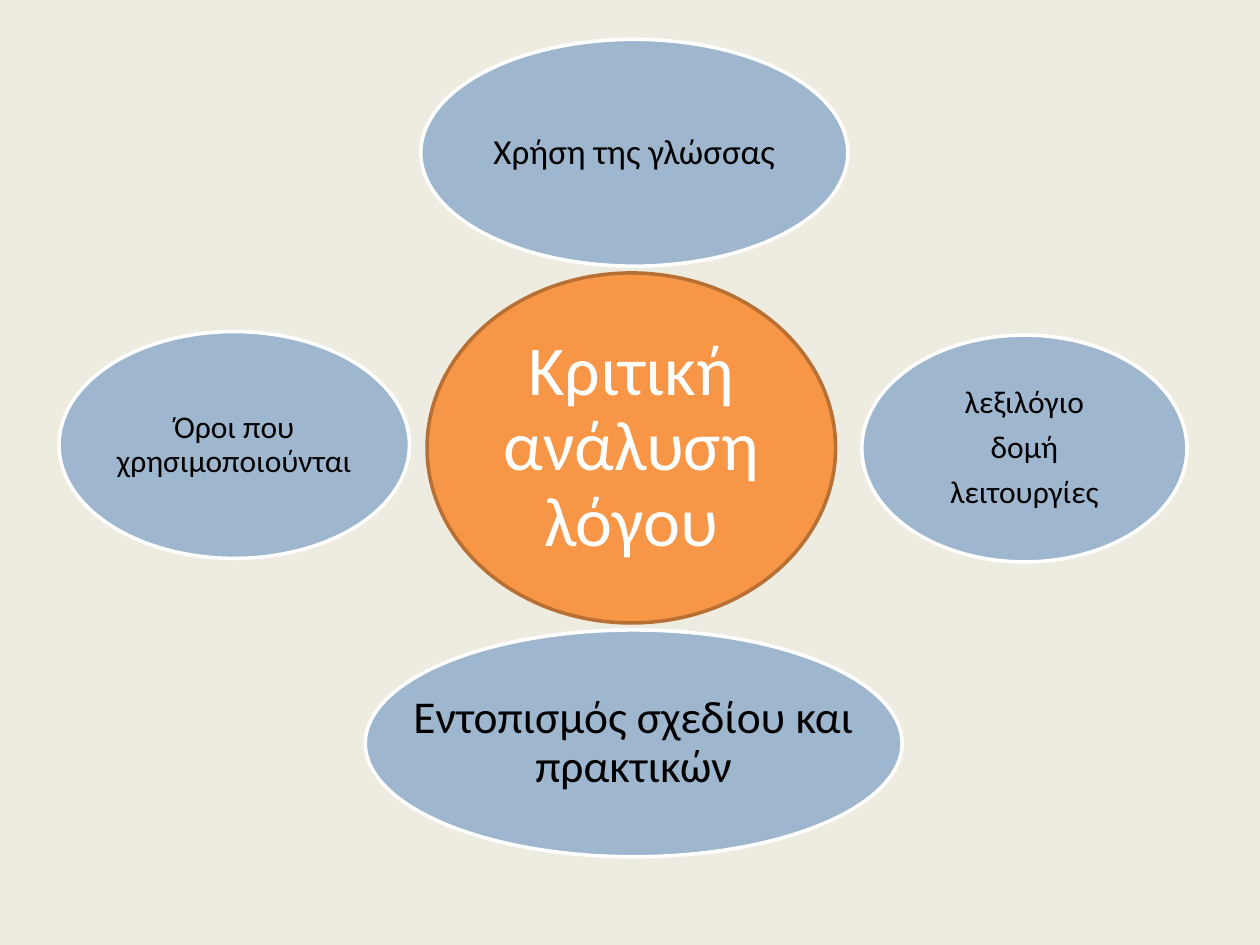
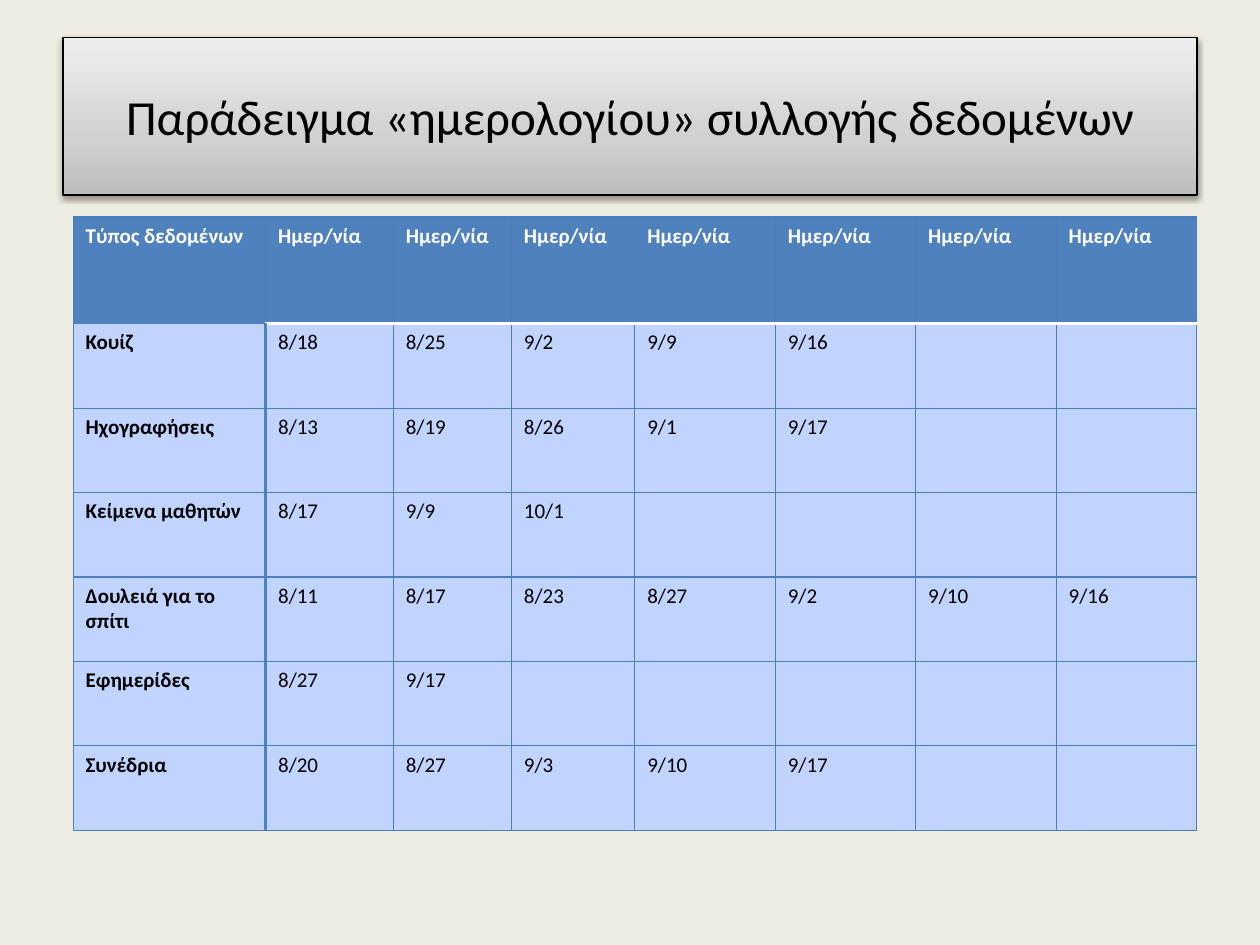
from lxml.etree import SubElement
from pptx import Presentation
from pptx.dml.color import RGBColor
from pptx.enum.shapes import MSO_SHAPE
from pptx.enum.text import MSO_ANCHOR, PP_ALIGN
from pptx.oxml import parse_xml
from pptx.oxml.ns import nsdecls, qn
from pptx.util import Pt

COLORS = {
    "background": "EEECE1",
    "orange": "F79646",
    "orange_edge": "B76F34",
    "blue": "4F81BD",
    "grid": "4B7EBC",
    "cell": "C0D4FF",
    "white": "FFFFFF",
    "black": "000000",
    "grey_dark": "BDBDBD",
    "grey_mid": "D1D1D1",
    "grey_light": "EEEEEE",
}
FONT = "Calibri"

SATELLITE_HEIGHT = 129.6
SATELLITES = [
    (["Χρήση της γλώσσας"], 240.5, 22.5, 244, 20),
    (["λεξιλόγιο", "δομή", "λειτουργίες"], 492.5, 191.5, 185.75, 18),
    (["Εντοπισμός σχεδίου και\vπρακτικών"], 208.75, 360, 306.75, 26),
    (["Όροι που χρησιμοποιούνται"], 33.75, 189.5, 200.25, 18),
]

COLUMN_WIDTHS = [110, 73, 67.5, 70.5] + [80.25] * 4
HEADER_HEIGHT, ROW_HEIGHT = 61, 48.25
DIARY = [
    ["Τύπος δεδομένων"] + ["Ημερ/νία"] * 7,
    ["Κουίζ", "8/18", "8/25", "9/2", "9/9", "9/16"],
    ["Ηχογραφήσεις", "8/13", "8/19", "8/26", "9/1", "9/17"],
    ["Κείμενα μαθητών", "8/17", "9/9", "10/1"],
    ["Δουλειά για το σπίτι", "8/11", "8/17", "8/23", "8/27", "9/2", "9/10", "9/16"],
    ["Εφημερίδες", "8/27", "9/17"],
    ["Συνέδρια", "8/20", "8/27", "9/3", "9/10", "9/17"],
]


def rgb(name):
    return RGBColor.from_string(COLORS[name])


def write(tf, lines, size, color="black", bold=False, align=PP_ALIGN.LEFT,
          spacing=None, after=None):
    for i, line in enumerate(lines):
        p = tf.paragraphs[0] if i == 0 else tf.add_paragraph()
        p.text = line
        p.alignment = align
        if spacing:
            p.line_spacing = spacing
        if after is not None:
            p.space_after = Pt(after)
        for r in p.runs:
            r.font.name = FONT
            r.font.size = Pt(size)
            r.font.bold = bold
            r.font.color.rgb = rgb(color)


def add_slide(prs, layout):
    s = prs.slides.add_slide(prs.slide_layouts.get_by_name(layout))
    s.background.fill.solid()
    s.background.fill.fore_color.rgb = rgb("background")
    return s


def add_ellipse(s, lines, x, y, w, h, fill, edge, size, color="black", alpha=None, margin=2):
    sp = s.shapes.add_shape(MSO_SHAPE.OVAL, Pt(x), Pt(y), Pt(w), Pt(h))
    sp.shadow.inherit = False
    sp.fill.solid()
    sp.fill.fore_color.rgb = rgb(fill)
    if alpha:
        clr = sp.fill._xPr.find(qn("a:solidFill"))[0]
        SubElement(clr, qn("a:alpha"), val=str(alpha * 1000))
    sp.line.color.rgb = rgb(edge)
    sp.line.width = Pt(2)
    tf = sp.text_frame
    tf.word_wrap = not any("\v" in line for line in lines)
    tf.vertical_anchor = MSO_ANCHOR.MIDDLE
    tf.margin_left = tf.margin_right = tf.margin_top = tf.margin_bottom = Pt(margin)
    write(tf, lines, size, color, align=PP_ALIGN.CENTER, spacing=0.9, after=round(size * 0.35, 2))


def add_title_band(s, text):
    sp = s.shapes.title
    sp.left, sp.top, sp.width, sp.height = Pt(36), Pt(21.5), Pt(648), Pt(90)
    stops = "".join(
        f'<a:gs pos="{pos}000"><a:srgbClr val="{COLORS[name]}"/></a:gs>'
        for pos, name in [(0, "grey_dark"), (35, "grey_mid"), (100, "grey_light")])
    sp_pr = sp.element.spPr
    sp_pr.append(parse_xml(
        f'<a:gradFill {nsdecls("a")} rotWithShape="1"><a:gsLst>{stops}</a:gsLst>'
        '<a:lin ang="16200000" scaled="1"/></a:gradFill>'))
    sp.line.color.rgb = rgb("black")
    sp.line.width = Pt(0.75)
    sp_pr.append(parse_xml(
        f'<a:effectLst {nsdecls("a")}><a:outerShdw blurRad="{Pt(3.1)}" dist="{Pt(1.6)}" '
        f'dir="5400000" rotWithShape="0"><a:srgbClr val="{COLORS["black"]}">'
        '<a:alpha val="38000"/></a:srgbClr></a:outerShdw></a:effectLst>'))
    sp.text_frame.vertical_anchor = MSO_ANCHOR.MIDDLE
    write(sp.text_frame, [text], 28, align=PP_ALIGN.CENTER)


def set_borders(cell, **special):
    tc_pr = cell._tc.get_or_add_tcPr()
    for side in "LRTB":
        color, width = special.get(side, ("grid", 0.75))
        ln = SubElement(tc_pr, qn(f"a:ln{side}"), w=str(Pt(width)))
        SubElement(SubElement(ln, qn("a:solidFill")), qn("a:srgbClr"), val=COLORS[color])


def cell_borders(row, col):
    special = {}
    if col > 0 and row < 2:
        special["B" if row == 0 else "T"] = ("white", 2)
    if row > 0 and col < 2:
        special["R" if col == 0 else "L"] = ("blue", 2)
    return special


def add_diary(s, x, y):
    height = HEADER_HEIGHT + ROW_HEIGHT * (len(DIARY) - 1)
    table = s.shapes.add_table(len(DIARY), len(COLUMN_WIDTHS), Pt(x), Pt(y),
                               Pt(sum(COLUMN_WIDTHS)), Pt(height)).table
    table.horz_banding = False
    for column, width in zip(table.columns, COLUMN_WIDTHS):
        column.width = Pt(width)
    for i, entries in enumerate(DIARY):
        header = i == 0
        table.rows[i].height = Pt(HEADER_HEIGHT if header else ROW_HEIGHT)
        for j in range(len(COLUMN_WIDTHS)):
            cell = table.cell(i, j)
            set_borders(cell, **cell_borders(i, j))
            cell.fill.solid()
            cell.fill.fore_color.rgb = rgb("blue" if header else "cell")
            if j < len(entries):
                write(cell.text_frame, [entries[j]], 12,
                      "white" if header else "black", bold=header or j == 0)


def main():
    prs = Presentation()
    prs.slide_width, prs.slide_height = Pt(720), Pt(540)

    s = add_slide(prs, "Blank")
    add_ellipse(s, ["Κριτική ανάλυση λόγου"], 244, 156, 233.5, 200,
                "orange", "orange_edge", 40, "white", margin=4)
    for lines, x, y, w, size in SATELLITES:
        add_ellipse(s, lines, x, y, w, SATELLITE_HEIGHT, "blue", "white", size, alpha=50)

    s = add_slide(prs, "Title Only")
    add_title_band(s, "Παράδειγμα «ημερολογίου» συλλογής δεδομένων")
    add_diary(s, 41.75, 124)

    prs.save("out.pptx")


if __name__ == "__main__":
    main()
